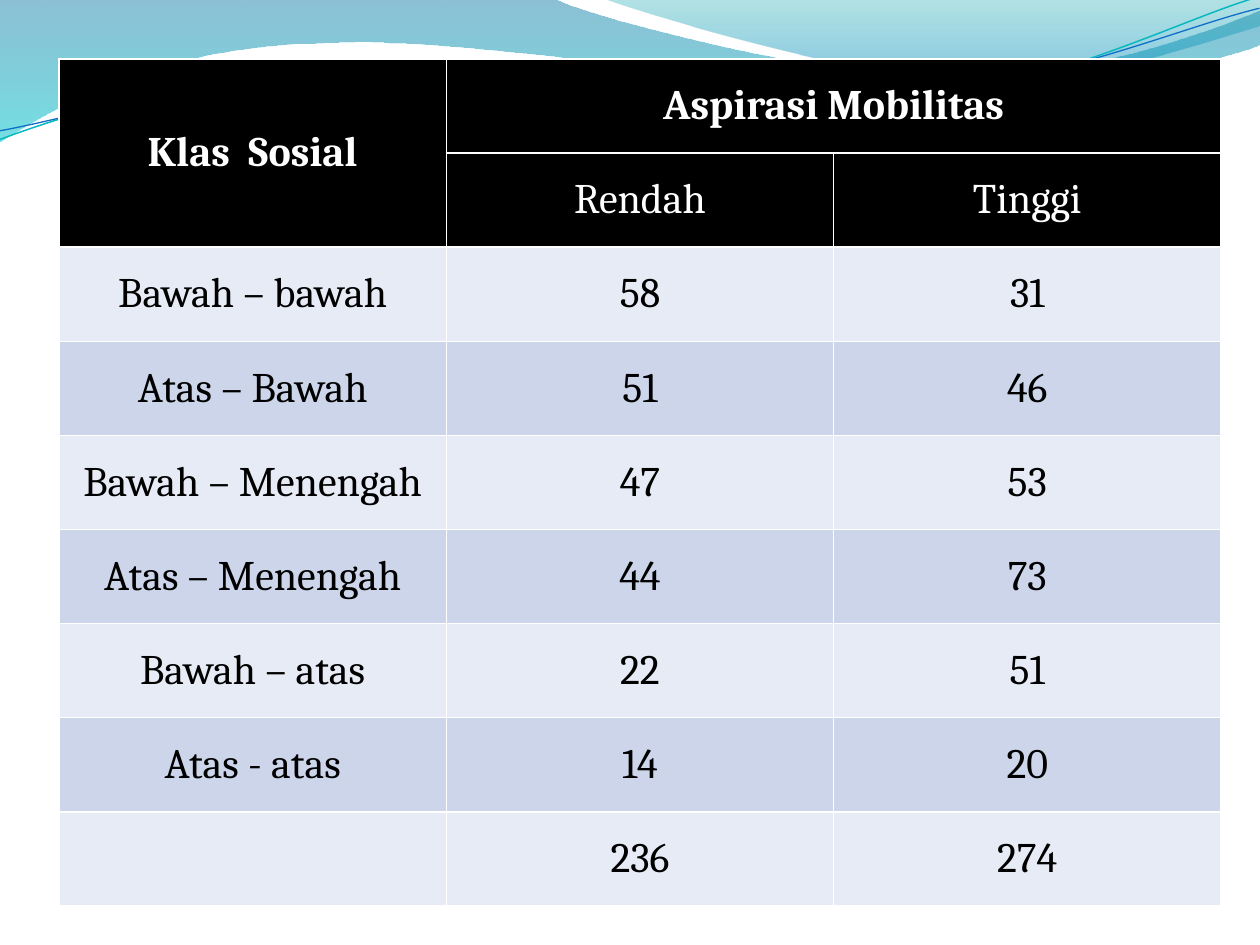
import dataclasses

import pptx
import pptx.dml.color
import pptx.enum.text
import pptx.oxml
import pptx.oxml.ns
import pptx.util

PX = 914400 / 126
FONT = "Cambria"
COLORS = {
    "white": "FFFFFF", "black": "000000", "light": "E7EBF5", "band": "CCD5EA",
    "blue": "0074A1", "cyan": "00C6CF", "teal": "00A1A9", "sky": "008BBF",
    "aqua": "0AB8BF", "navy": "0F6FC6",
}
LEFT, TOP, TABLE_W, TABLE_H = 59, 59, 1162, 847
HEAD_ROWS = 2
ROWS = [
    ("Klas  Sosial", "Aspirasi Mobilitas", ""),
    ("", "Rendah", "Tinggi"),
    ("Bawah – bawah", "58", "31"),
    ("Atas – Bawah", "51", "46"),
    ("Bawah – Menengah", "47", "53"),
    ("Atas – Menengah", "44", "73"),
    ("Bawah – atas", "22", "51"),
    ("Atas - atas", "14", "20"),
    ("", "236", "274"),
]


@dataclasses.dataclass
class Wave:
    start: tuple
    segments: list
    stops: tuple = ()
    line: str = ""
    width: float = 0
    rotation: float = 0


WAVES = [
    Wave((0, 0), [
        (554, -1),
        (600, 21, 837, 79, 955, 79), (1075, 79, 1207, 33, 1260, 11),
        (1261, 45),
        (1235, 55, 1096, 96, 940, 95), (783, 95, 481, 35, 324, 43),
        (163, 45, 58, 105, -1, 142),
    ], stops=((0, "blue", 45), (100, "cyan", 55))),
    Wave((604, -1), [
        (642, 14, 859, 78, 969, 82), (1079, 87, 1211, 40, 1260, 26),
        (1260, 0),
    ], stops=((0, "teal", 30), (80, "sky", 45))),
    Wave((-3, 110), [
        (59, 90, 199, 52, 350, 53), (499, 53, 745, 118, 896, 114),
        (1049, 109, 1184, 45, 1260, 27),
    ], line="aqua", width=0.85, rotation=357.3),
    Wave((-2, 101), [
        (57, 94, 207, 57, 357, 58), (509, 58, 750, 112, 902, 108),
        (1052, 104, 1187, 52, 1262, 38),
    ], line="navy", width=0.75, rotation=357.3),
]


def px(n: float) -> int:
    return pptx.util.Emu(round(n * PX))


def rgb(name: str) -> pptx.dml.color.RGBColor:
    return pptx.dml.color.RGBColor.from_string(COLORS[name])


def set_curves(sp, segments: list) -> None:
    qn = pptx.oxml.ns.qn
    lines = iter(list(sp._element.iter(qn("a:lnTo"))))
    for seg in segments:
        first = next(lines)
        if len(seg) == 2:
            continue
        first.tag
        curve = pptx.oxml.parse_xml(f'<a:cubicBezTo {pptx.oxml.ns.nsdecls("a")}/>')
        first.addprevious(curve)
        for line in (first, next(lines), next(lines)):
            curve.append(line.find(qn("a:pt")))
            line.getparent().remove(line)


def set_gradient(sp, stops: tuple) -> None:
    gs = "".join(
        f'<a:gs pos="{pos * 1000}"><a:srgbClr val="{COLORS[color]}">'
        f'<a:alpha val="{alpha * 1000}"/></a:srgbClr></a:gs>'
        for pos, color, alpha in stops)
    sp.fill.background()
    none = sp._element.spPr.find(pptx.oxml.ns.qn("a:noFill"))
    none.getparent().replace(none, pptx.oxml.parse_xml(
        f'<a:gradFill {pptx.oxml.ns.nsdecls("a")} rotWithShape="1"><a:gsLst>{gs}</a:gsLst>'
        '<a:lin ang="5400000" scaled="0"/></a:gradFill>'))


def draw_wave(s, wave: Wave) -> None:
    points = [seg[i:i + 2] for seg in wave.segments for i in range(0, len(seg), 2)]
    builder = s.shapes.build_freeform(*wave.start, scale=PX)
    builder.add_line_segments(points, close=bool(wave.stops))
    sp = builder.convert_to_shape()
    set_curves(sp, wave.segments)
    sp.shadow.inherit = False
    sp.rotation = wave.rotation
    if wave.stops:
        set_gradient(sp, wave.stops)
        sp.line.fill.background()
    else:
        sp.fill.background()
        sp.line.color.rgb = rgb(wave.line)
        sp.line.width = pptx.util.Pt(wave.width)


def write(tf, text: str, *, color: str = "black", bold: bool = False, size: int = 24) -> None:
    p = tf.paragraphs[0]
    p.alignment = pptx.enum.text.PP_ALIGN.CENTER
    r = p.add_run()
    r.text = text
    r.font.name = FONT
    r.font.size = pptx.util.Pt(size)
    r.font.bold = bold
    r.font.color.rgb = rgb(color)


def draw_table(s) -> None:
    cols = len(ROWS[0])
    table = s.shapes.add_table(
        len(ROWS), cols, px(LEFT), px(TOP), px(TABLE_W), px(TABLE_H)).table
    for col in table.columns:
        col.width = px(TABLE_W / cols)
    for row in table.rows:
        row.height = px(TABLE_H / len(ROWS))
    table.cell(0, 0).merge(table.cell(1, 0))
    table.cell(0, 1).merge(table.cell(0, 2))
    for r, texts in enumerate(ROWS):
        head = r < HEAD_ROWS
        fill = "black" if head else ("light", "band")[r % 2]
        for c, text in enumerate(texts):
            cell = table.cell(r, c)
            cell.fill.solid()
            cell.fill.fore_color.rgb = rgb(fill)
            cell.vertical_anchor = pptx.enum.text.MSO_ANCHOR.MIDDLE
            if text:
                write(cell.text_frame, text, color="white" if head else "black", bold=r == 0)


def main() -> None:
    prs = pptx.Presentation()
    prs.slide_width, prs.slide_height = px(1260), px(945)
    s = prs.slides.add_slide(prs.slide_layouts[6])
    for wave in WAVES:
        draw_wave(s, wave)
    draw_table(s)
    prs.save("out.pptx")


if __name__ == "__main__":
    main()
